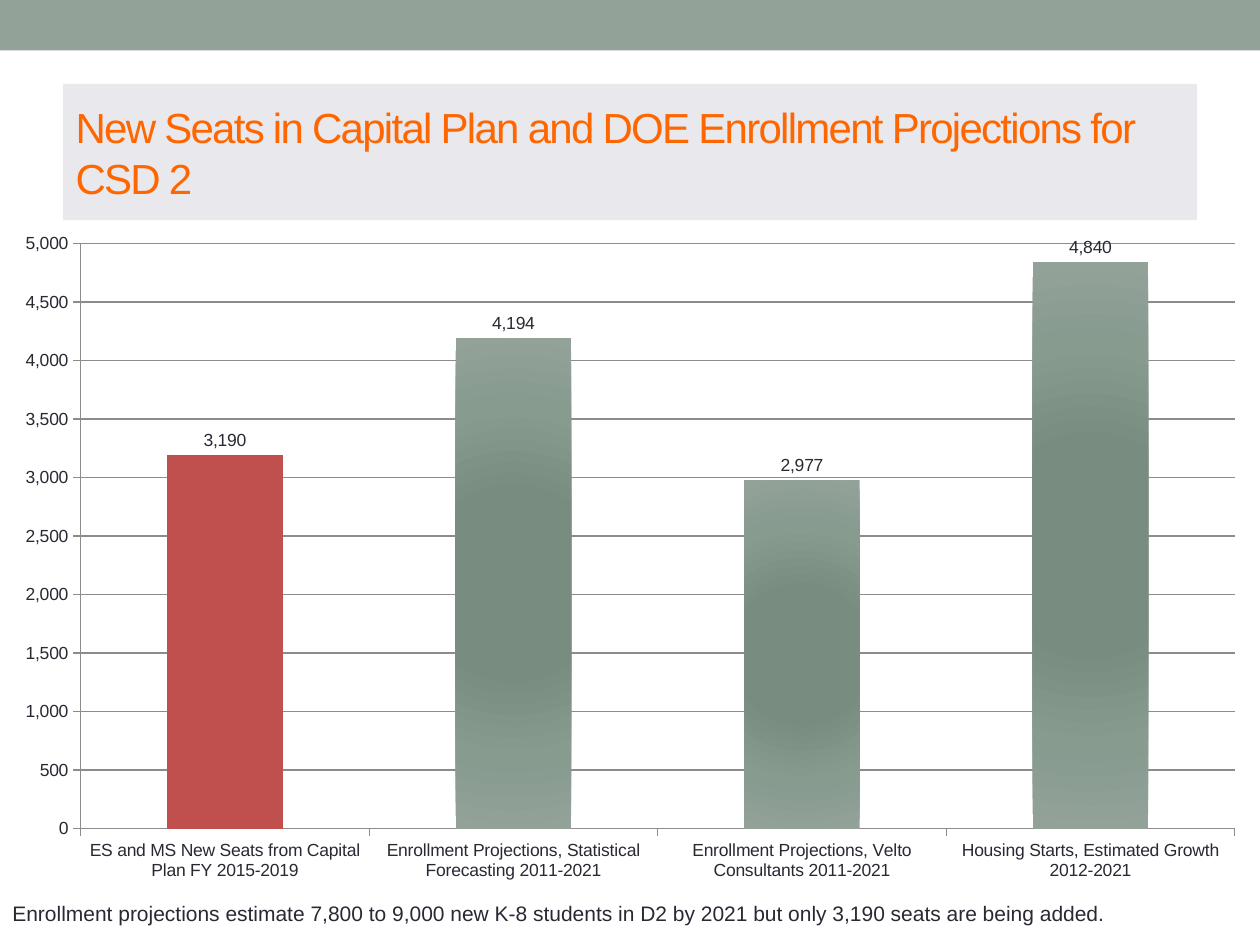
"""Build a slide comparing new school seats with enrollment projections."""
from lxml import etree
from pptx import Presentation
from pptx.chart.data import CategoryChartData
from pptx.dml.color import RGBColor
from pptx.enum.chart import XL_CHART_TYPE, XL_LABEL_POSITION, XL_TICK_MARK
from pptx.enum.shapes import MSO_SHAPE
from pptx.enum.text import MSO_ANCHOR, MSO_AUTO_SIZE, PP_ALIGN
from pptx.oxml import parse_xml
from pptx.util import Cm, Pt

COLUMNS = XL_CHART_TYPE.COLUMN_CLUSTERED
OUTSIDE_END = XL_LABEL_POSITION.OUTSIDE_END
TICK_OUT = XL_TICK_MARK.OUTSIDE
TICK_NONE = XL_TICK_MARK.NONE
RECTANGLE = MSO_SHAPE.RECTANGLE
MIDDLE = MSO_ANCHOR.MIDDLE
NO_AUTOFIT = MSO_AUTO_SIZE.NONE
FIT_SHAPE = MSO_AUTO_SIZE.SHAPE_TO_FIT_TEXT
LEFT = PP_ALIGN.LEFT

FONT = "Arial"
NUMBER_FORMAT = "#,##0"
COLORS = {
    "sage": "93A299",
    "sage_mid": "879B8F",
    "sage_dark": "788D80",
    "panel": "E8E8ED",
    "title": "FF6600",
    "text": "292934",
    "seats": "C0504D",
    "grid": "8C8C8C",
}
DRAWING_NS = "http://schemas.openxmlformats.org/drawingml/2006/main"
CHART_NS = "http://schemas.openxmlformats.org/drawingml/2006/chart"
SEATS = {
    "ES and MS New Seats from Capital Plan FY 2015-2019": 3190,
    "Enrollment Projections, Statistical Forecasting 2011-2021": 4194,
    "Enrollment Projections, Velto Consultants 2011-2021": 2977,
    "Housing Starts, Estimated Growth 2012-2021": 4840,
}


def rgb(name):
    return RGBColor.from_string(COLORS[name])


def write(frame, text, size, color, spacing=0, wrap=True, fit=NO_AUTOFIT):
    frame.word_wrap = wrap
    frame.auto_size = fit
    paragraph = frame.paragraphs[0]
    paragraph.alignment = LEFT
    run = paragraph.add_run()
    run.text = text
    run.font.name = FONT
    run.font.size = Pt(size)
    run.font.color.rgb = rgb(color)
    if spacing:
        run.font._element.set("spc", str(spacing))


prs = Presentation()
prs.slide_width, prs.slide_height = Cm(25.4), Cm(19.05)
slide = prs.slides.add_slide(prs.slide_layouts[5])

top_band = slide.shapes.add_shape(RECTANGLE, 0, 0, prs.slide_width, Cm(1.02))
top_band.shadow.inherit = False
top_band.fill.solid()
top_band.fill.fore_color.rgb = rgb("sage")
top_band.line.fill.background()

title = slide.shapes.title
title.left, title.top, title.width, title.height = Cm(1.27), Cm(1.69), Cm(22.86), Cm(2.75)
title.fill.solid()
title.fill.fore_color.rgb = rgb("panel")
title.text_frame.vertical_anchor = MIDDLE
write(title.text_frame, "New Seats in Capital Plan and DOE Enrollment Projections for CSD 2",
      24, "title", spacing=-100)

takeaway = slide.shapes.add_textbox(0, Cm(18.03), Cm(22.78), Cm(0.77))
write(takeaway.text_frame,
      "Enrollment projections estimate 7,800 to 9,000 new K-8 students in D2 by 2021 "
      "but only 3,190 seats are being added.", 12, "text", wrap=False, fit=FIT_SHAPE)

seat_data = CategoryChartData(number_format=NUMBER_FORMAT)
seat_data.categories = list(SEATS)
seat_data.add_series("Series 1", list(SEATS.values()))
chart = slide.shapes.add_chart(COLUMNS, 0, Cm(4.45), Cm(25.4), Cm(13.59), seat_data).chart
chart.has_title = False
chart.has_legend = False
chart.font.name = FONT
chart.font.size = Pt(10)
chart.font.color.rgb = rgb("text")

value_axis = chart.value_axis
value_axis.minimum_scale, value_axis.maximum_scale = 0, 5000
value_axis.major_unit = 500
value_axis.has_major_gridlines = True
value_axis.tick_labels.number_format = NUMBER_FORMAT
value_axis.tick_labels.number_format_is_linked = False
for axis in (value_axis, chart.category_axis):
    axis.major_tick_mark = TICK_OUT
    axis.minor_tick_mark = TICK_NONE
for ruled in (value_axis, chart.category_axis, value_axis.major_gridlines):
    ruled.format.line.color.rgb = rgb("grid")
    ruled.format.line.width = Pt(0.7)

plot = chart.plots[0]
plot.gap_width = 150
plot.vary_by_categories = False
plot.has_data_labels = True
labels = plot.data_labels
labels.show_value = True
labels.number_format = NUMBER_FORMAT
labels.number_format_is_linked = False
labels.position = OUTSIDE_END

bars = plot.series[0]
bars.invert_if_negative = False
bars.format.fill.solid()
bars.format.fill.fore_color.rgb = rgb("sage")
stops = "".join(
    f'<a:gs pos="{position * 1000}"><a:srgbClr val="{COLORS[color]}"/></a:gs>'
    for position, color in ((0, "sage_dark"), (35, "sage_dark"), (70, "sage_mid"), (100, "sage"))
)
glow = parse_xml(
    f'<a:gradFill xmlns:a="{DRAWING_NS}" rotWithShape="1"><a:gsLst>{stops}</a:gsLst>'
    '<a:path path="circle"><a:fillToRect l="50000" t="50000" r="50000" b="50000"/></a:path>'
    "</a:gradFill>"
)
solid = bars._element.find(f".//{{{DRAWING_NS}}}solidFill")
solid.getparent().replace(solid, glow)
planned = bars.points[0].format.fill
planned.solid()
planned.fore_color.rgb = rgb("seats")

plot_area = chart._chartSpace.find(f".//{{{CHART_NS}}}plotArea")
for automatic in plot_area.findall(f"{{{CHART_NS}}}layout"):
    plot_area.remove(automatic)
layout = etree.Element(f"{{{CHART_NS}}}layout")
manual = etree.SubElement(layout, f"{{{CHART_NS}}}manualLayout")
for tag, value in (("layoutTarget", "inner"), ("xMode", "edge"), ("yMode", "edge"),
                   ("x", "0.064"), ("y", "0.034"), ("w", "0.916"), ("h", "0.868")):
    etree.SubElement(manual, f"{{{CHART_NS}}}{tag}", val=value)
plot_area.insert(0, layout)

prs.save("out.pptx")
